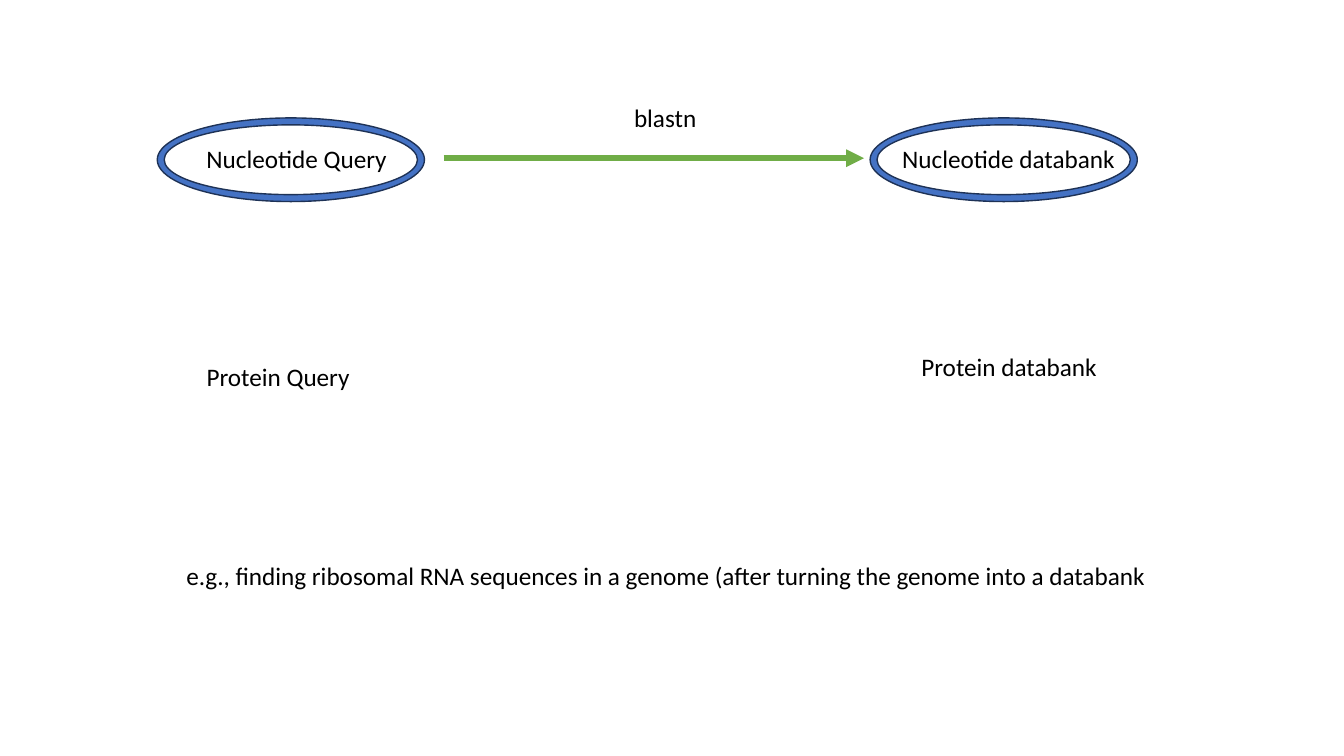
from dataclasses import dataclass

from lxml import etree
from pptx import Presentation
from pptx.dml.color import RGBColor
from pptx.enum.shapes import MSO_CONNECTOR, MSO_SHAPE
from pptx.enum.text import MSO_AUTO_SIZE
from pptx.oxml.ns import qn
from pptx.slide import Slide
from pptx.util import Inches, Pt

STRAIGHT = MSO_CONNECTOR.STRAIGHT
DONUT = MSO_SHAPE.DONUT
GROW = MSO_AUTO_SIZE.SHAPE_TO_FIT_TEXT

FONT = "Calibri"
BLACK, BLUE, NAVY, GREEN = "000000", "4472C4", "1E3256", "70AD47"


@dataclass
class Label:
    text: str
    left: float
    top: float
    width: float
    height: float = 0.4


LABELS = [
    Label("Nucleotide databank", 8.85, 1.37, 2.34),
    Label("Protein databank", 9.04, 3.44, 1.96, 0.71),
    Label("Nucleotide Query", 1.95, 1.37, 2.07),
    Label("Protein Query", 1.95, 3.54, 1.72),
    Label("blastn", 6.19, 0.97, 0.83),
    Label("e.g., finding ribosomal RNA sequences in a genome "
          "(after turning the genome into a databank", 1.75, 5.51, 9.84),
]
RING_LEFTS = (1.56, 8.63)


def rgb(value: str) -> RGBColor:
    return RGBColor.from_string(value)


def add_label(slide: Slide, label: Label) -> None:
    box = slide.shapes.add_textbox(Inches(label.left), Inches(label.top),
                                   Inches(label.width), Inches(label.height))
    frame = box.text_frame
    frame.word_wrap = False
    frame.auto_size = GROW
    paragraph = frame.paragraphs[0]
    paragraph.text = label.text
    paragraph.font.name = FONT
    paragraph.font.size = Pt(18)
    paragraph.font.color.rgb = rgb(BLACK)


def add_search_arrow(slide: Slide, start: float, end: float, y: float) -> None:
    arrow = slide.shapes.add_connector(STRAIGHT, Inches(start), Inches(y),
                                       Inches(end), Inches(y))
    arrow.line.color.rgb = rgb(GREEN)
    arrow.line.width = Pt(4.25)
    properties = arrow.line._get_or_add_ln()
    etree.SubElement(properties, qn("a:tailEnd"), type="triangle")
    etree.SubElement(arrow._element.spPr, qn("a:effectLst"))


def add_ring(slide: Slide, left: float) -> None:
    ring = slide.shapes.add_shape(DONUT, Inches(left), Inches(1.17),
                                  Inches(2.65), Inches(0.83))
    ring.adjustments[0] = 0.083
    ring.shadow.inherit = False
    ring.fill.solid()
    ring.fill.fore_color.rgb = rgb(BLUE)
    ring.line.color.rgb = rgb(NAVY)
    ring.line.width = Pt(1)


def main() -> None:
    deck = Presentation()
    deck.slide_width, deck.slide_height = Inches(13.33), Inches(7.5)
    slide = deck.slides.add_slide(deck.slide_layouts[6])

    # Queries, databanks, program name and example
    for label in LABELS:
        add_label(slide, label)

    # Search from nucleotide query to nucleotide databank
    add_search_arrow(slide, 4.4, 8.57, 1.57)

    # Rings around the nucleotide pair
    for left in RING_LEFTS:
        add_ring(slide, left)

    deck.save("out.pptx")


if __name__ == "__main__":
    main()
